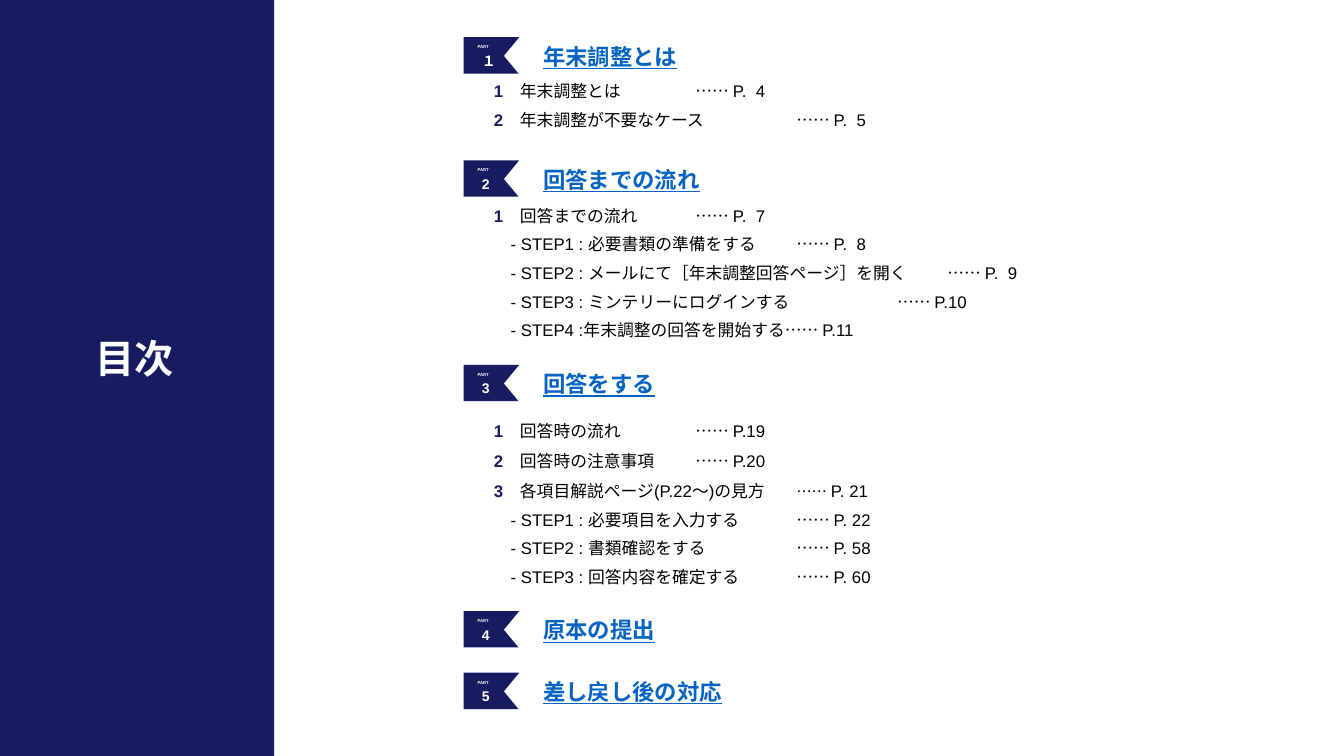
from dataclasses import dataclass
from typing import Optional

from lxml.etree import SubElement
from pptx import Presentation
from pptx.dml.color import RGBColor
from pptx.enum.shapes import MSO_SHAPE
from pptx.enum.text import MSO_ANCHOR
from pptx.oxml.ns import qn
from pptx.util import Pt

NAVY, WHITE, BLACK, LINK_BLUE = "171C61", "FFFFFF", "000000", "0563C1"
FONT = "Arial"


@dataclass
class Entry:
    number: str
    label: str
    page: str
    tab: Optional[int] = 144  # points from the left edge of the list
    dots_size: int = 12
    line_spacing: float = 1.0
    space_before: int = 6


@dataclass
class Part:
    number: str
    heading: str
    top: float
    list_offset: float = 0
    entries: tuple = ()


PARTS = [
    Part("１", "年末調整とは", 26.6, 31, (
        Entry("1", "年末調整とは", "P.  4", space_before=0),
        Entry("2", "年末調整が不要なケース", "P.  5", 216),
    )),
    Part("2", "回答までの流れ", 114.5, 32.4, (
        Entry("1", "回答までの流れ", "P.  7", space_before=0),
        Entry("", "- STEP1 : 必要書類の準備をする", "P.  8", 216),
        Entry("", "- STEP2 : メールにて［年末調整回答ページ］を開く", "P.  9", 324),
        Entry("", "- STEP3 : ミンテリーにログインする", "P.10", 288),
        Entry("", "- STEP4 :年末調整の回答を開始する", "P.11", None),
    )),
    Part("3", "回答をする", 260.6, 32.4, (
        Entry("1", "回答時の流れ", "P.19", line_spacing=1.5, space_before=0),
        Entry("2", "回答時の注意事項", "P.20", line_spacing=1.5, space_before=0),
        Entry("3", "各項目解説ページ(P.22～)の見方", "P. 21", 216, 11, 1.5, 0),
        Entry("", "- STEP1 : 必要項目を入力する", "P. 22", 216),
        Entry("", "- STEP2 : 書類確認をする", "P. 58", 216),
        Entry("", "- STEP3 : 回答内容を確定する", "P. 60", 216),
    )),
    Part("4", "原本の提出", 436.5),
    Part("5", "差し戻し後の対応", 480.5),
]


def color(hex_string):
    return RGBColor.from_string(hex_string)


def add_block(slide, preset, left, top, width, height, fill):
    block = slide.shapes.add_shape(preset, Pt(left), Pt(top), Pt(width), Pt(height))
    block.shadow.inherit = False
    block.fill.solid()
    block.fill.fore_color.rgb = color(fill)
    block.line.fill.background()
    return block


def add_frame(slide, left, top, width, height, margins=(0, 0)):
    box = slide.shapes.add_textbox(Pt(left), Pt(top), Pt(width), Pt(height))
    frame = box.text_frame
    frame.word_wrap = True
    frame.margin_left = frame.margin_right = Pt(margins[0])
    frame.margin_top = frame.margin_bottom = Pt(margins[1])
    return frame


def write_label(frame, text, size, hex_string):
    paragraph = frame.paragraphs[0]
    paragraph.text = text
    font = paragraph.font
    font.name, font.size, font.bold = FONT, Pt(size), True
    font.color.rgb = color(hex_string)
    return paragraph


def add_title_panel(slide, left, top, width, height):
    add_block(slide, MSO_SHAPE.RECTANGLE, left, top, width, height, NAVY)
    title = add_frame(slide, left + 61.2, top + 235.4, 73, 41, (7.2, 3.6))
    write_label(title, "目次", 28, WHITE)


def add_badge(slide, left, top, number):
    # Flag with a white notch at its right end
    add_block(slide, MSO_SHAPE.RECTANGLE, left, top, 39.6, 26, NAVY)
    caption = add_frame(slide, left + 2.9, top + 1.7, 30, 10.8, (7.2, 3.6))
    write_label(caption, "PART", 3, WHITE)
    write_label(add_frame(slide, left + 13, top + 10.8, 10.1, 12), number, 10, WHITE)
    notch = add_block(slide, MSO_SHAPE.ISOSCELES_TRIANGLE,
                      left + 20.2, top + 7.2, 29.5, 12.2, WHITE)
    notch.rotation = 270


def write_entry(paragraph, entry):
    paragraph.line_spacing = entry.line_spacing
    paragraph.space_before = Pt(entry.space_before)
    if entry.tab:
        tabs = SubElement(paragraph._p.get_or_add_pPr(), qn("a:tabLst"))
        SubElement(tabs, qn("a:tab"), pos=str(Pt(entry.tab)), algn="l")
    paragraph.font.name = FONT
    gap = "\t" if entry.tab else ""
    pieces = [
        (entry.number, NAVY, 12),
        ("　" + entry.label, BLACK, 12),
        (gap + "……", BLACK, entry.dots_size),
        (" " + entry.page, BLACK, 12),
    ]
    for text, hex_string, size in pieces:
        if text:
            run = paragraph.add_run()
            run.text = text
            run.font.size = Pt(size)
            run.font.bold = hex_string == NAVY
            run.font.color.rgb = color(hex_string)


def add_part(slide, left, top, part):
    add_badge(slide, left, top, part.number)

    # Heading
    heading = add_frame(slide, left + 56.9, top + 3.8, 204, 19.4)
    heading.vertical_anchor = MSO_ANCHOR.MIDDLE
    write_label(heading, part.heading, 16, LINK_BLUE).font.underline = True

    # Entries with page numbers
    if part.entries:
        listing = add_frame(slide, left + 21.6, top + part.list_offset,
                            443, 20 * len(part.entries))
        for index, entry in enumerate(part.entries):
            paragraph = listing.add_paragraph() if index else listing.paragraphs[0]
            write_entry(paragraph, entry)


def main():
    presentation = Presentation()
    presentation.slide_width, presentation.slide_height = Pt(960), Pt(540)
    slide = presentation.slides.add_slide(presentation.slide_layouts[6])
    add_title_panel(slide, 0, 0, 195.8, 540)
    for part in PARTS:
        add_part(slide, 331.2, part.top, part)
    presentation.save("out.pptx")


if __name__ == "__main__":
    main()
